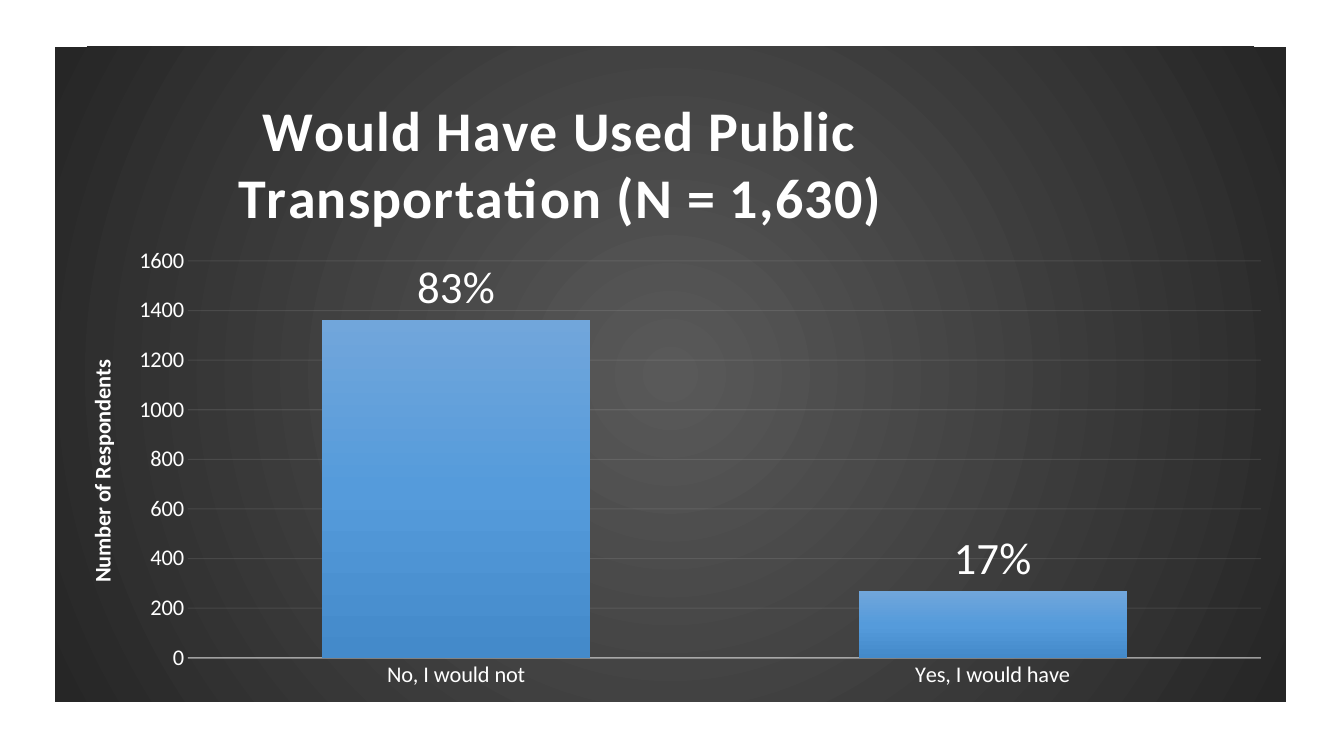
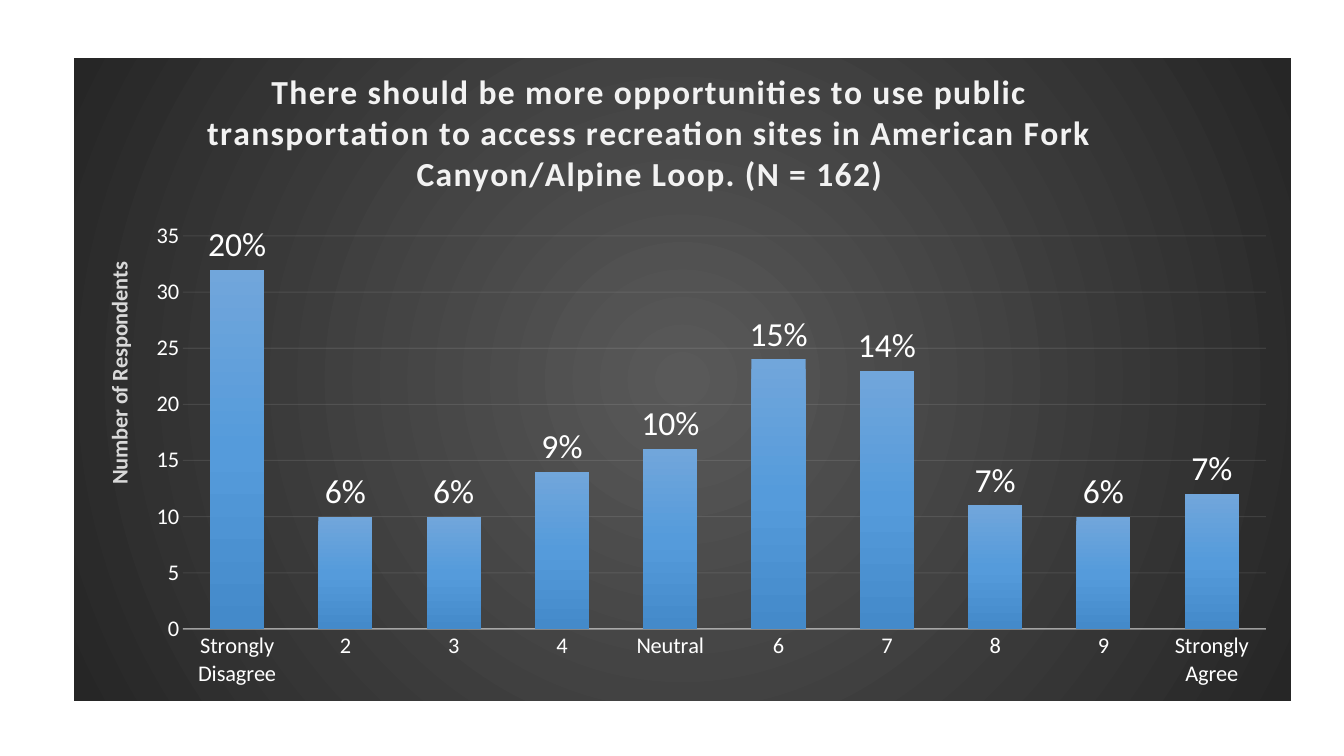
from dataclasses import dataclass
from lxml import etree
from pptx import Presentation
from pptx.chart.data import CategoryChartData
from pptx.dml.color import RGBColor
from pptx.enum.chart import XL_CHART_TYPE, XL_LABEL_POSITION, XL_TICK_MARK
from pptx.oxml import parse_xml
from pptx.oxml.ns import nsdecls, qn
from pptx.util import Emu, Pt

PX = 914400 / 100.8


@dataclass(frozen=True)
class Theme:
    font: str = "Calibri"
    white: str = "FFFFFF"
    off_white: str = "F2F2F2"
    light_gray: str = "D9D9D9"
    panel: tuple = ((0, "595959"), (100, "262626"))
    bar: tuple = ((0, "71A6DB"), (50, "559BDB"), (100, "448ACA"))
    axis_size: int = 16


theme = Theme()

CHARTS = [
    dict(
        frame=(55, 47, 1231, 655),
        title="Would Have Used Public Transportation (N = 1,630)",
        title_size=40, title_color=theme.white, title_at=(228, 82),
        axis_title_color=theme.white, axis_title_at=(83, 356),
        plot=(188, 261, 1073, 397),
        top=1600, step=200, label_size=32,
        answers=[("No, I would not", 1360, "83%"),
                 ("Yes, I would have", 270, "17%")],
    ),
    dict(
        frame=(74, 58, 1217, 643),
        title="There should be more opportunities to use public transportation "
              "to access recreation sites in American Fork Canyon/Alpine Loop. (N = 162)",
        title_size=24, title_color=theme.off_white, title_at=(201, 63),
        axis_title_color=theme.light_gray, axis_title_at=(100, 258),
        plot=(183, 236, 1083, 393),
        top=35, step=5, label_size=24,
        answers=[("Strongly Disagree", 32, "20%"), ("2", 10, "6%"), ("3", 10, "6%"),
                 ("4", 14, "9%"), ("Neutral", 16, "10%"), ("6", 24, "15%"),
                 ("7", 23, "14%"), ("8", 11, "7%"), ("9", 10, "6%"),
                 ("Strongly Agree", 12, "7%")],
    ),
]


def gradient(stops, direction):
    """Return a gradFill element; direction is its a:lin or a:path markup."""
    gs = "".join(f'<a:gs pos="{pos * 1000}"><a:srgbClr val="{color}"/></a:gs>'
                 for pos, color in stops)
    return parse_xml(f'<a:gradFill {nsdecls("a")} rotWithShape="1">'
                     f"<a:gsLst>{gs}</a:gsLst>{direction}</a:gradFill>")


def place(element, index, frame, box):
    """Give a chart part a manual layout from slide px: (x, y) or (x, y, w, h)."""
    old = element.find(qn("c:layout"))
    if old is not None:
        element.remove(old)
    left, top, width, height = frame
    values = [("xMode", "edge"), ("yMode", "edge"),
              ("x", (box[0] - left) / width), ("y", (box[1] - top) / height)]
    if len(box) == 4:
        values.insert(0, ("layoutTarget", "inner"))
        values += [("w", box[2] / width), ("h", box[3] / height)]
    layout = etree.Element(qn("c:layout"))
    manual = etree.SubElement(layout, qn("c:manualLayout"))
    for name, value in values:
        etree.SubElement(manual, qn(f"c:{name}")).set("val", str(value))
    element.insert(index, layout)


prs = Presentation()
prs.slide_width = Emu(round(1344 * PX))
prs.slide_height = Emu(round(756 * PX))

for c in CHARTS:
    s = prs.slides.add_slide(prs.slide_layouts[6])
    names, counts, shares = zip(*c["answers"])
    data = CategoryChartData()
    data.categories = names
    data.add_series("Series 1", counts)
    frame = [Emu(round(n * PX)) for n in c["frame"]]
    chart = s.shapes.add_chart(XL_CHART_TYPE.COLUMN_CLUSTERED, *frame, data).chart
    chart.has_legend = False
    chart.font.name = theme.font
    chart.font.size = Pt(theme.axis_size)
    chart.font.color.rgb = RGBColor.from_string(theme.white)

    # Dark panel behind the chart
    space = chart._chartSpace
    panel = parse_xml(f'<c:spPr {nsdecls("c", "a")}><a:ln><a:noFill/></a:ln></c:spPr>')
    panel.insert(0, gradient(theme.panel, '<a:path path="circle"><a:fillToRect l="50000" '
                             't="50000" r="50000" b="50000"/></a:path>'))
    space.find(qn("c:txPr")).addprevious(panel)
    place(space.find(".//" + qn("c:plotArea")), 0, c["frame"], c["plot"])

    # Axes and gridlines
    cat, val = chart.category_axis, chart.value_axis
    val.minimum_scale, val.maximum_scale, val.major_unit = 0, c["top"], c["step"]
    for axis in (cat, val):
        axis.major_tick_mark = axis.minor_tick_mark = XL_TICK_MARK.NONE
        axis.tick_labels.font.name = theme.font
        axis.tick_labels.font.size = Pt(theme.axis_size)
        axis.tick_labels.font.color.rgb = RGBColor.from_string(theme.white)
    val.format.line.fill.background()
    for part, width, opacity in ((cat, 1, 54), (val.major_gridlines, 0.75, 10)):
        line = part.format.line
        line.width = Pt(width)
        line.color.rgb = RGBColor.from_string(theme.off_white)
        color = part.format.line._ln.find(".//" + qn("a:srgbClr"))
        etree.SubElement(color, qn("a:alpha")).set("val", str(opacity * 1000))

    # Titles
    for title, text, size, color, at, spacing, turn in (
        (chart.chart_title, c["title"], c["title_size"], c["title_color"],
         c["title_at"], 100, 0),
        (val.axis_title, "Number of Respondents", theme.axis_size,
         c["axis_title_color"], c["axis_title_at"], 0, -90),
    ):
        tf = title.text_frame
        tf.text = text
        tf._txBody.bodyPr.set("rot", str(turn * 60000))
        r = tf.paragraphs[0].runs[0]
        r.font.name, r.font.size, r.font.bold = theme.font, Pt(size), True
        r.font.color.rgb = RGBColor.from_string(color)
        r._r.get_or_add_rPr().set("spc", str(spacing))
        place(title._element, 1, c["frame"], at)

    # Bars and their percentages
    plot = chart.plots[0]
    plot.gap_width, plot.overlap, plot.vary_by_categories = 100, -24, False
    bars = plot.series[0]
    bars._element.get_or_add_spPr().append(
        gradient(theme.bar, '<a:lin ang="5400000" scaled="0"/>'))
    for i, share in enumerate(shares):
        label = bars.points[i].data_label
        label.text_frame.text = share
        label.position = XL_LABEL_POSITION.OUTSIDE_END
        r = label.text_frame.paragraphs[0].runs[0]
        r.font.name, r.font.size = theme.font, Pt(c["label_size"])
        r.font.color.rgb = RGBColor.from_string(theme.white)

prs.save("out.pptx")
